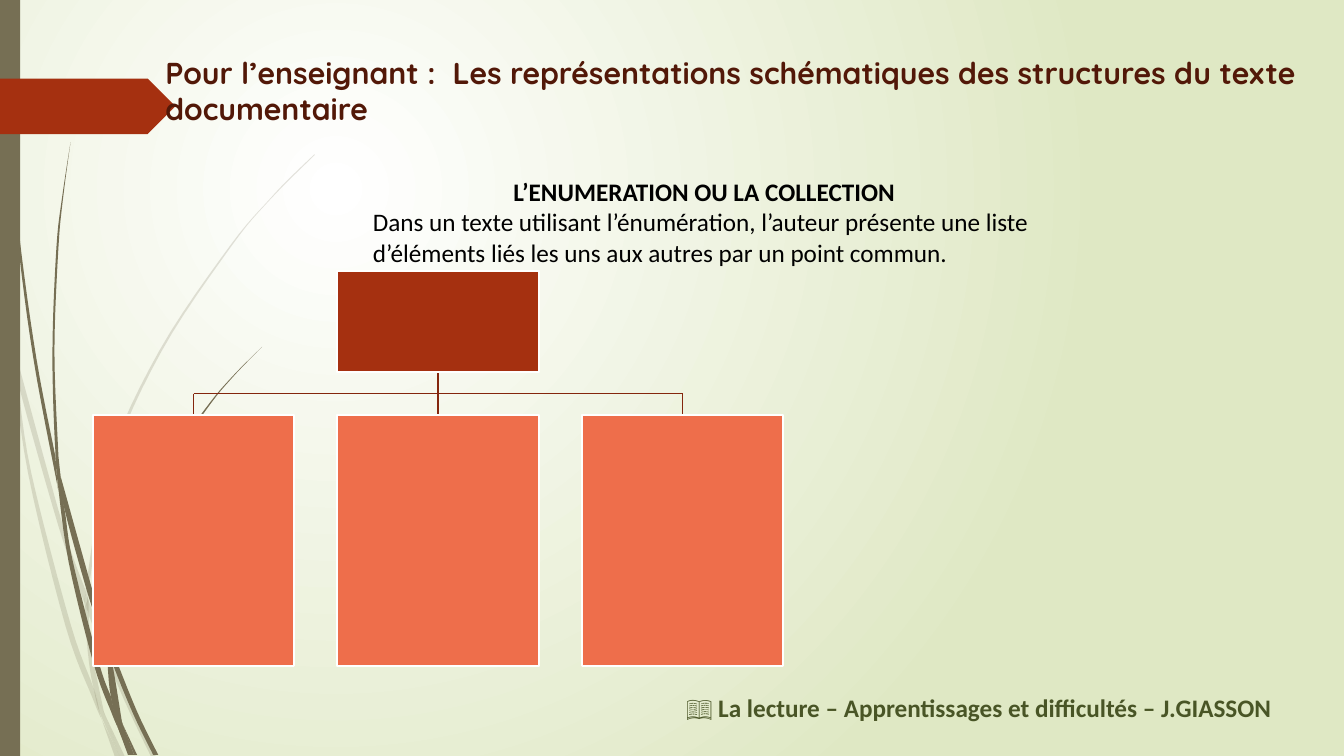
from lxml import etree
from pptx import Presentation
from pptx.dml.color import RGBColor
from pptx.enum.shapes import MSO_CONNECTOR as Connector, MSO_SHAPE as Shape
from pptx.enum.text import MSO_ANCHOR as Anchor, MSO_AUTO_SIZE as AutoSize, PP_ALIGN as Align
from pptx.oxml.ns import qn
from pptx.util import Inches, Pt

WHITE = RGBColor(0xFF, 0xFF, 0xFF)
BLACK = RGBColor(0x00, 0x00, 0x00)
PALE_GREEN = RGBColor(0xDF, 0xE8, 0xC4)
OLIVE = RGBColor(0x49, 0x55, 0x26)
TAUPE = RGBColor(0x76, 0x6F, 0x54)
RUST = RGBColor(0xA5, 0x30, 0x10)
DARK_RUST = RGBColor(0x84, 0x26, 0x0D)
MAROON = RGBColor(0x52, 0x18, 0x08)
CORAL = RGBColor(0xEE, 0x6E, 0x4B)

# Each piece of grass is a pair of edges: one running one way, the other back.
PALE_GRASS = [
    ([(0, 2.99), (0.1, 3.44), (0.11, 3.5)], [(0.09, 3.22), (0, 2.82)]),
    ([(0.14, 3.45), (0.17, 3.76), (0.58, 5.22), (0.84, 5.99)], [(0.85, 5.86), (0.62, 5.2), (0.14, 3.45)]),
    ([(0.88, 5.96), (0.88, 6.1), (1.23, 6.94), (1.5, 7.51)], [(1.55, 7.51), (1.27, 6.92), (0.92, 6.07)]),
    ([(1.05, 7.11), (1.19, 7.51)], [(1.24, 7.51), (1.05, 7.11)]),
    ([(0.11, 3.5), (0.28, 4.7), (0.65, 6.21), (0.92, 6.93), (1.01, 7.14)],
     [(0.99, 7.07), (0.93, 6.83), (0.7, 6.19), (0.31, 4.69), (0.17, 3.76), (0.11, 3.5)]),
    ([(0.84, 5.99), (0.87, 6.46), (0.93, 6.83), (1.05, 7.11)], [(1.03, 7.06), (0.91, 6.46), (0.88, 6.1)]),
    ([(3.12, 1.53), (2.89, 1.75), (2.68, 1.97), (2.28, 2.44), (1.58, 3.48), (1.07, 4.61), (0.85, 5.84)],
     [(0.88, 5.96), (0.88, 5.84), (1.1, 4.62), (1.6, 3.49), (2.29, 2.45), (2.68, 1.98), (3.12, 1.54)]),
    ([(1.01, 7.14), (1.14, 7.51)], [(1.19, 7.51), (1.01, 7.14)]),
    ([(0.85, 5.86), (0.84, 5.99), (0.88, 6.08)], [(0.88, 6.1), (0.88, 5.96)]),
    ([(0.93, 6.83), (0.99, 7.07), (1.19, 7.51)], [(1.05, 7.11), (0.96, 6.92)]),
]
DARK_GRASS = [
    ([(0.03, 0), (0.04, 0.48), (0.07, 1.1), (0.17, 2.33), (0.33, 3.55), (0.56, 4.77), (0.57, 4.81)],
     [(0.55, 4.53), (0.36, 3.55), (0.19, 2.32), (0.08, 1.09), (0.05, 0.48), (0.04, 0)]),
    ([(0.6, 4.72), (0.64, 5.05), (0.88, 5.92), (1.06, 6.45)], [(1.06, 6.31), (0.93, 5.9), (0.6, 4.72)]),
    ([(1.1, 6.41), (1.11, 6.56), (1.32, 7.08), (1.52, 7.49)], [(1.57, 7.49), (1.36, 7.06), (1.13, 6.49)]),
    ([(0.57, 4.77), (0.68, 5.57), (0.93, 6.59), (1.11, 7.08), (1.17, 7.22)],
     [(1.1, 6.91), (0.98, 6.57), (0.72, 5.56), (0.64, 5.05), (0.57, 4.77)]),
    ([(0.7, 1.41), (0.62, 1.93), (0.56, 2.45), (0.52, 3.49), (0.55, 4.49), (0.6, 4.72)],
     [(0.58, 4.53), (0.54, 3.49), (0.58, 2.45), (0.63, 1.93), (0.7, 1.41)]),
    ([(1.22, 7.19), (1.33, 7.49)], [(1.36, 7.49), (1.22, 7.19)]),
    ([(0.55, 4.49), (0.57, 4.77), (0.64, 5.05)], [(0.6, 4.72), (0.55, 4.49)]),
    ([(2.6, 3.44), (2.31, 3.73), (2.04, 4.05), (1.56, 4.74), (1.22, 5.51), (1.06, 6.31)],
     [(1.1, 6.41), (1.11, 6.33), (1.25, 5.52), (1.58, 4.76), (2.05, 4.06), (2.31, 3.74), (2.6, 3.44)]),
    ([(1.17, 7.22), (1.27, 7.49)], [(1.31, 7.49), (1.17, 7.22)]),
    ([(1.06, 6.45), (1.1, 6.91), (1.22, 7.19)], [(1.21, 7.16), (1.11, 6.56), (1.06, 6.45)]),
    ([(1.1, 6.91), (1.17, 7.22), (1.3, 7.49)], [(1.33, 7.49), (1.22, 7.19), (1.1, 6.91)]),
]


def paint(shape, color, line=None):
    shape.shadow.inherit = False
    shape.fill.solid()
    shape.fill.fore_color.rgb = color
    if line is None:
        shape.line.fill.background()
    else:
        shape.line.color.rgb = line
        shape.line.width = Pt(1.25)


def add_block(slide, kind, box, color, line=None):
    block = slide.shapes.add_shape(kind, *map(Inches, box))
    paint(block, color, line)
    return block


def write(para, text, align=Align.LEFT, **formats):
    para.alignment = align
    span = para.add_run()
    span.text = text
    span.font.color.rgb = formats.pop("color")
    for name, value in formats.items():
        setattr(span.font, name, value)


def set_background(slide):
    fill = slide.background.fill
    fill.gradient()
    for stop, color, position in zip(fill.gradient_stops, (WHITE, PALE_GREEN), (0, 1)):
        stop.color.rgb, stop.position = color, position
    gradient = slide.element.find(".//" + qn("a:gradFill"))
    gradient.remove(gradient.find(qn("a:lin")))
    circle = etree.SubElement(gradient, qn("a:path"), path="circle")
    etree.SubElement(circle, qn("a:fillToRect"), l="50000", t="50000", r="100000", b="100000")


def smooth_edge(points, steps=6):
    """Return points along the Catmull-Rom curve through the given points."""
    padded = [points[0], *points, points[-1]]
    curve = [points[0]]
    for corners in zip(padded, padded[1:], padded[2:], padded[3:]):
        for t in (step / steps for step in range(1, steps + 1)):
            curve.append(tuple(
                (2 * q + (r - p) * t + (2 * p - 5 * q + 4 * r - s) * t ** 2
                 + (3 * q - p - 3 * r + s) * t ** 3) / 2 for p, q, r, s in zip(*corners)))
    return curve


def add_grass(slide, box, pieces, opacity=100):
    left, top = box[:2]
    for there, back in pieces:
        outline = [(Inches(left + x), Inches(top + y))
                   for x, y in smooth_edge(there) + smooth_edge(back)]
        builder = slide.shapes.build_freeform(*outline[0])
        builder.add_line_segments(outline[1:], close=True)
        blade = builder.convert_to_shape()
        paint(blade, TAUPE)
        if opacity < 100:
            color = blade.element.spPr.find(qn("a:solidFill"))[0]
            etree.SubElement(color, qn("a:alpha"), val=str(opacity * 1000))


def add_decoration(slide, box):
    left, top, _, height = box
    add_grass(slide, box, PALE_GRASS, opacity=20)
    add_grass(slide, box, DARK_GRASS)
    add_block(slide, Shape.RECTANGLE, (left, top, 0.2, height), TAUPE)
    add_block(slide, Shape.PENTAGON, (left, top + 0.78, 1.74, 0.55), RUST)


def add_title(slide, box):
    title = slide.shapes.title
    title.left, title.top, title.width, title.height = map(Inches, box)
    frame = title.text_frame
    frame.word_wrap, frame.auto_size, frame.vertical_anchor = True, AutoSize.NONE, Anchor.TOP
    write(frame.paragraphs[0], "Pour l’enseignant :  Les représentations schématiques des structures "
          "du texte documentaire", size=Pt(21.6), name="Quicksand", bold=True, color=MAROON)
    slide.shapes.element.append(title.element)  # in front of the banner


def add_line(slide, start, end):
    line = slide.shapes.add_connector(Connector.STRAIGHT, *map(Inches, start + end))
    line.line.color.rgb = DARK_RUST
    line.line.width = Pt(1.25)
    etree.SubElement(line.element.spPr, qn("a:effectLst"))
    return line


def add_tree(slide, box, count=3):
    """Draw a root block above a row of child blocks, joined by lines."""
    left, top, width, height = box
    block_width, root_height, gap = 2, 1, 0.43
    pitch = (width - block_width) / (count - 1)
    center = left + width / 2
    root_bottom = top + root_height
    bus, row = root_bottom + gap / 2, root_bottom + gap
    middles = [left + block_width / 2 + pitch * index for index in range(count)]

    add_line(slide, (middles[0], bus), (middles[-1], bus))
    trunk = add_line(slide, (center, root_bottom), (center, bus))
    drops = [add_line(slide, (middle, bus), (middle, row)) for middle in middles]
    root = add_block(slide, Shape.RECTANGLE,
                     (center - block_width / 2, top, block_width, root_height), RUST, WHITE)
    trunk.begin_connect(root, 2)
    for middle, drop in zip(middles, drops):
        child_box = (middle - block_width / 2, row, block_width, top + height - row)
        drop.end_connect(add_block(slide, Shape.RECTANGLE, child_box, CORAL, WHITE), 0)


def add_text(slide, box, lines, color):
    """Write (text, alignment, bold) lines into a text box."""
    frame = slide.shapes.add_textbox(*map(Inches, box)).text_frame
    frame.word_wrap = True
    for index, (text, align, bold) in enumerate(lines):
        para = frame.add_paragraph() if index else frame.paragraphs[0]
        write(para, text, align, size=Pt(18), name="Calibri", bold=bold, color=color)


def main():
    deck = Presentation()
    deck.slide_width, deck.slide_height = Inches(13.33), Inches(7.5)
    slide = deck.slides.add_slide(deck.slide_layouts[5])
    set_background(slide)
    add_decoration(slide, (0, 0, 13.33, 7.5))
    add_title(slide, (1.54, 0.49, 11.5, 0.4))
    add_tree(slide, (0.92, 2.69, 6.85, 3.92))
    add_text(slide, (3.6, 1.7, 6.77, 1.01), [
        ("L’ENUMERATION OU LA COLLECTION", Align.CENTER, True),
        ("Dans un texte utilisant l’énumération, l’auteur présente une liste d’éléments "
         "liés les uns aux autres par un point commun.", Align.LEFT, False)], BLACK)
    add_text(slide, (6.02, 6.82, 6.69, 0.4), [
        ("📖 La lecture – Apprentissages et difficultés – J.GIASSON", Align.RIGHT, True)], OLIVE)
    deck.save("out.pptx")


main() if __name__ == "__main__" else None
